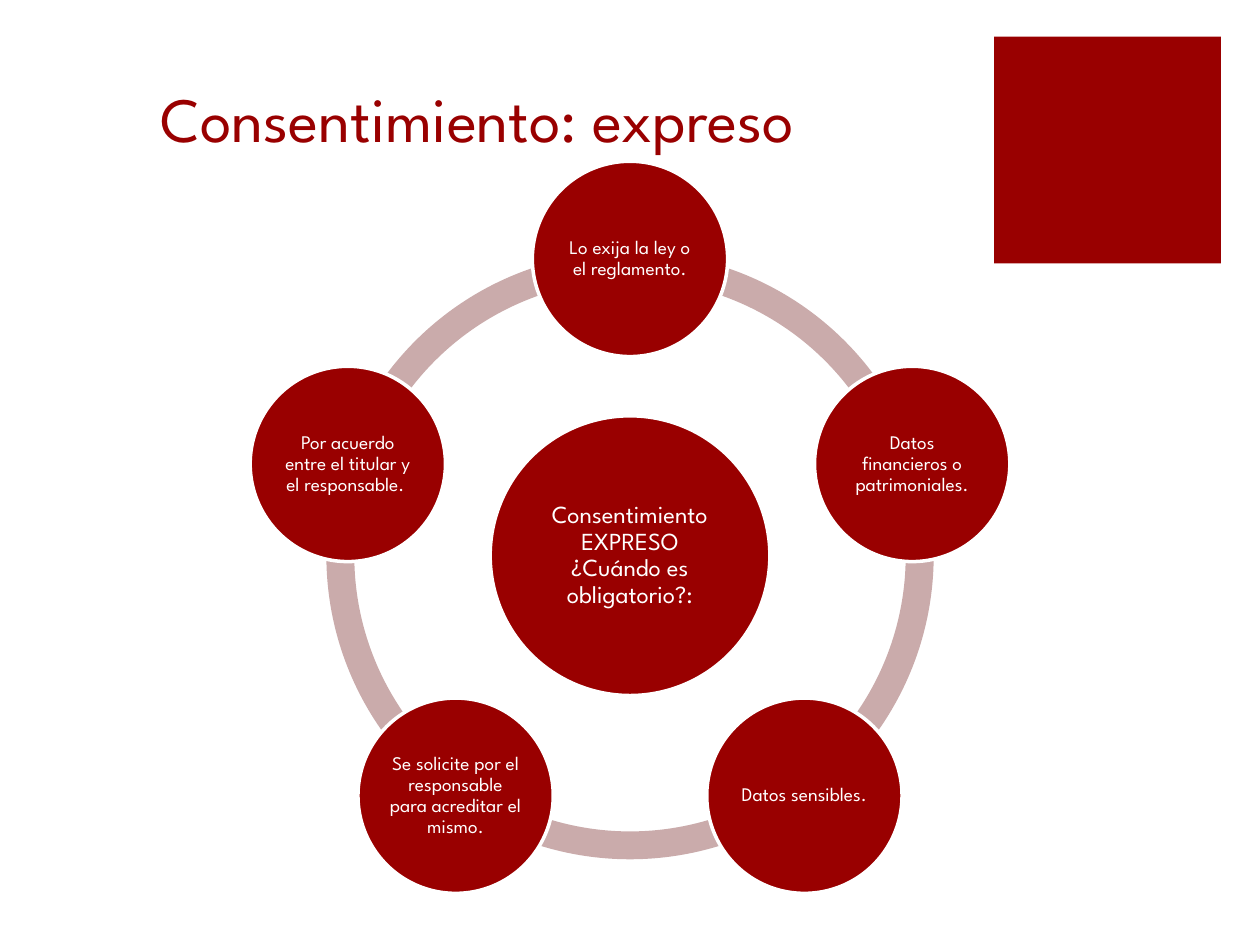
from math import cos, radians, sin

from pptx import Presentation
from pptx.dml.color import RGBColor
from pptx.enum.shapes import MSO_SHAPE
from pptx.enum.text import MSO_ANCHOR, PP_ALIGN
from pptx.util import Inches, Pt

COLORS = {"red": "990000", "rose": "CAABAB", "white": "FFFFFF"}
MID_X, MID_Y = 5, 4.41
ORBIT = 2.355
RING = 4.82
NODES = [
    "Lo exija la ley o el reglamento.",
    "Datos financieros o patrimoniales.",
    "Datos sensibles.",
    "Se solicite por el responsable para acreditar el mismo.",
    "Por acuerdo entre el titular y el responsable. ",
]


def add_shape(kind, x, y, size, color):
    """Add a plain square-sized shape centred on x, y."""
    shape = slide.shapes.add_shape(
        kind, Inches(x - size / 2), Inches(y - size / 2), Inches(size), Inches(size))
    shape.shadow.inherit = False
    shape.fill.solid()
    shape.fill.fore_color.rgb = RGBColor.from_string(COLORS[color])
    shape.line.fill.background()
    return shape


def set_text(shape, text, size, color, anchor, inset):
    frame = shape.text_frame
    frame.text = text
    form = {"word_wrap": True, "vertical_anchor": anchor}
    for side in ("left", "right", "top", "bottom"):
        form[f"margin_{side}"] = Inches(inset)
    for name, value in form.items():
        setattr(frame, name, value)
    line = frame.paragraphs[0]
    line.alignment = PP_ALIGN.CENTER
    font = line.runs[0].font
    for name, value in {"name": "League Spartan", "size": Pt(size), "bold": False}.items():
        setattr(font, name, value)
    font.color.rgb = RGBColor.from_string(COLORS[color])
    return line


deck = Presentation()
deck.slide_width, deck.slide_height = Inches(10), Inches(7.5)
slide = deck.slides.add_slide(deck.slide_layouts[5])

title = slide.shapes.title
place = {"left": 0.23, "top": 0.3, "width": 7.12, "height": 0.98}
for name, value in place.items():
    setattr(title, name, Inches(value))
set_text(title, "Consentimiento: expreso", 36, "red", MSO_ANCHOR.BOTTOM, 0.05)

add_shape(MSO_SHAPE.RECTANGLE, 8.79, 1.19, 1.8, "red")

# The ring runs clockwise from the top, one arc between each pair of nodes
step = 360 / len(NODES)
angles = [(270 + i * step) % 360 for i in range(len(NODES))]
for angle in angles:
    arc = add_shape(MSO_SHAPE.BLOCK_ARC, MID_X, MID_Y, RING, "rose")
    # Angles are stored in 60000ths of a degree, adjustments in 100000ths
    arc.adjustments[0] = angle * 0.6
    arc.adjustments[1] = (angle + step) % 360 * 0.6
    arc.adjustments[2] = 0.046

discs = [("Consentimiento EXPRESO ¿Cuándo es obligatorio?:", MID_X, MID_Y, 2.22, 14)]
for text, angle in zip(NODES, angles):
    turn = radians(angle)
    discs.append((text, MID_X + ORBIT * cos(turn), MID_Y + ORBIT * sin(turn), 1.55, 11))

for text, x, y, size, points in discs:
    disc = add_shape(MSO_SHAPE.OVAL, x, y, size, "red")
    disc.line.color.rgb = RGBColor.from_string(COLORS["white"])
    disc.line.width = Pt(2)
    line = set_text(disc, text, points, "white", MSO_ANCHOR.MIDDLE, 0.02)
    line.line_spacing = 0.9

deck.save("out.pptx")
